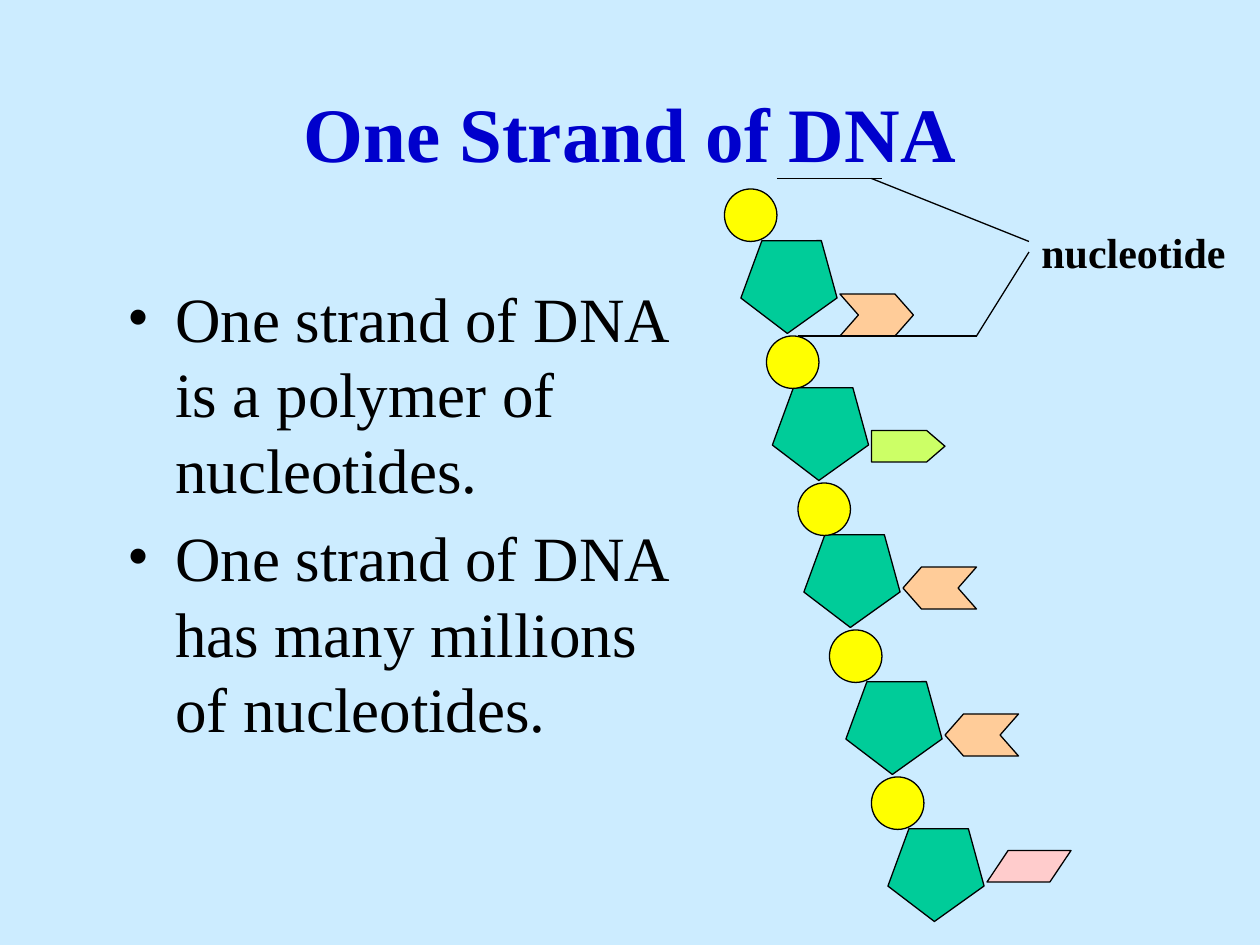
from lxml.etree import SubElement
from pptx import Presentation
from pptx.dml.color import RGBColor
from pptx.enum.shapes import MSO_CONNECTOR, MSO_SHAPE
from pptx.enum.text import MSO_ANCHOR, MSO_AUTO_SIZE, PP_ALIGN
from pptx.oxml.ns import qn
from pptx.util import Pt

PX = 7620
FONT = "Times New Roman"
BLACK = "000000"
LINE_WIDTH = Pt(0.75)


def color(value):
    return RGBColor.from_string(value)


class StrandSlide:
    """Draw styled elements on one slide, measured in px of 1/120 inch."""

    def __init__(self, presentation):
        self.slide = presentation.slides.add_slide(presentation.slide_layouts[6])
        fill = self.slide.background.fill
        fill.solid()
        fill.fore_color.rgb = color("CCECFF")

    def text(self, box, lines, size, ink=BLACK, bold=False, align=PP_ALIGN.LEFT,
             anchor=MSO_ANCHOR.TOP, bullets=False, grow=False):
        shape = self.slide.shapes.add_textbox(*(n * PX for n in box))
        frame = shape.text_frame
        frame.word_wrap = True
        frame.vertical_anchor = anchor
        frame.auto_size = MSO_AUTO_SIZE.SHAPE_TO_FIT_TEXT if grow else MSO_AUTO_SIZE.NONE
        for index, line in enumerate(lines):
            paragraph = frame.add_paragraph() if index else frame.paragraphs[0]
            paragraph.alignment = align
            if index:
                paragraph.space_before = Pt(size * 0.2)
            if bullets:
                self.bullet(paragraph)
            run = paragraph.add_run()
            run.text = line
            run.font.name = FONT
            run.font.size = Pt(size)
            run.font.bold = bold
            run.font.color.rgb = color(ink)
        return shape

    def bullet(self, paragraph, indent=45):
        properties = paragraph._p.get_or_add_pPr()
        properties.set("marL", str(indent * PX))
        properties.set("indent", str(-indent * PX))
        SubElement(properties, qn("a:buFont"), typeface=FONT)
        SubElement(properties, qn("a:buChar"), char="•")

    def shape(self, kind, box, fill, rotation=0, adjustment=None):
        shape = self.slide.shapes.add_shape(kind, *(n * PX for n in box))
        shape.shadow.inherit = False
        shape.rotation = rotation
        if adjustment is not None:
            shape.adjustments[0] = adjustment
        shape.fill.solid()
        shape.fill.fore_color.rgb = color(fill)
        shape.line.color.rgb = color(BLACK)
        shape.line.width = LINE_WIDTH
        return shape

    def line(self, *ends):
        connector = self.slide.shapes.add_connector(
            MSO_CONNECTOR.STRAIGHT, *(n * PX for n in ends))
        connector.line.color.rgb = color(BLACK)
        connector.line.width = LINE_WIDTH
        SubElement(connector._element.spPr, qn("a:effectLst"))
        return connector


def main():
    presentation = Presentation()
    presentation.slide_width = 1200 * PX
    presentation.slide_height = 900 * PX
    slide = StrandSlide(presentation)

    slide.text((90, 50, 1020, 150), ["One Strand of DNA"], 44, "0000CC", True,
               PP_ALIGN.CENTER, MSO_ANCHOR.MIDDLE)
    slide.text((110, 260, 560, 500),
               ["One strand of DNA is a polymer of nucleotides.",
                "One strand of DNA has many millions of nucleotides."],
               36, bullets=True)

    pitch = 140
    for index, left in enumerate((710, 740, 770, 810, 850)):
        slide.shape(MSO_SHAPE.REGULAR_PENTAGON, (left, 220 + index * pitch, 90, 90),
                    "00CC99", 37.3)
    for index, left in enumerate((690, 730, 760, 790, 830)):
        slide.shape(MSO_SHAPE.OVAL, (left, 180 + index * pitch, 50, 50), "FFFF00")

    for left, top, rotation in ((800, 280, 0), (860, 540, 180), (900, 680, 180)):
        slide.shape(MSO_SHAPE.CHEVRON, (left, top, 70, 40), "FFCC99", rotation, 0.44)
    slide.shape(MSO_SHAPE.PENTAGON, (830, 410, 70, 30), "CCFF66", adjustment=0.58)
    slide.shape(MSO_SHAPE.PARALLELOGRAM, (940, 810, 80, 30), "FFCCCC", adjustment=0.67)

    slide.line(740, 170, 840, 170)
    slide.line(760, 320, 930, 320)
    slide.line(830, 170, 980, 230)
    lower_leader = slide.line(930, 320, 980, 240)
    label = slide.text((980, 210, 210, 60), ["nucleotide"], 24, bold=True, grow=True)
    lower_leader.end_connect(label, 1)

    presentation.save("out.pptx")


if __name__ == "__main__":
    main()
